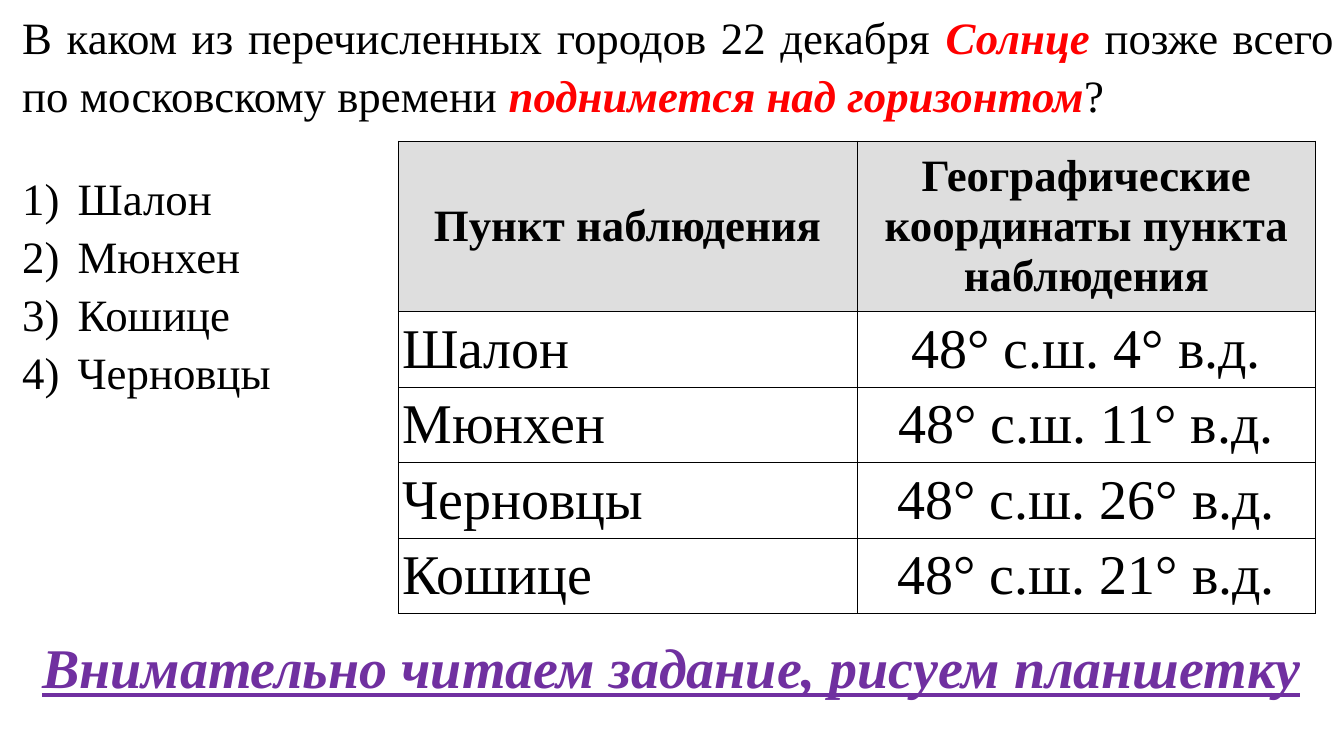
from lxml.etree import SubElement
from pptx import Presentation
from pptx.dml.color import RGBColor
from pptx.enum.text import MSO_ANCHOR, MSO_AUTO_SIZE, PP_ALIGN
from pptx.oxml.ns import qn
from pptx.util import Inches, Pt

BLACK = RGBColor(0x00, 0x00, 0x00)
WHITE = RGBColor(0xFF, 0xFF, 0xFF)
RED = RGBColor(0xFF, 0x00, 0x00)
PURPLE = RGBColor(0x70, 0x30, 0xA0)
GREY = RGBColor(0xDE, 0xDE, 0xDE)

NORMAL = dict(size=Pt(32), bold=False, italic=False)
ACCENT = dict(size=Pt(32), bold=True, italic=True)
HEADER = dict(size=Pt(32), bold=True)
CELL = dict(size=Pt(40), bold=False)
REMINDER = dict(size=Pt(40), bold=True, italic=True, underline=True)

LINE_SPACING = 1.08
NUMBER_INDENT = Inches(0.55)
CELL_MARGIN = Inches(0.04)
HEADER_HEIGHT, ROW_HEIGHT = Inches(1.69), Inches(0.75)

QUESTION = [
    ("В каком из перечисленных городов 22 декабря ", NORMAL, BLACK),
    ("Солнце", ACCENT, RED),
    (" позже всего по московскому времени ", NORMAL, BLACK),
    ("поднимется над горизонтом", ACCENT, RED),
    ("?", NORMAL, BLACK),
]
ANSWERS = ["Шалон", "Мюнхен", "Кошице", "Черновцы"]
TABLE = [
    ("Пункт наблюдения", "Географические координаты пункта наблюдения"),
    ("Шалон", "48° с.ш. 4° в.д."),
    ("Мюнхен", "48° с.ш. 11° в.д."),
    ("Черновцы", "48° с.ш. 26° в.д."),
    ("Кошице", "48° с.ш. 21° в.д."),
]


def add_run(p, text, style, color):
    r = p.add_run()
    r.text = text
    r.font.name = "Times New Roman"
    r.font.color.rgb = color
    for name, value in style.items():
        setattr(r.font, name, value)


def place(sp, box):
    """Move a placeholder into the box and align its text to the top."""
    sp.left, sp.top, sp.width, sp.height = (Inches(v) for v in box)
    tf = sp.text_frame
    tf.word_wrap = True
    tf.auto_size = MSO_AUTO_SIZE.NONE
    tf.vertical_anchor = MSO_ANCHOR.TOP
    return tf


def add_question(s, box):
    p = place(s.shapes.title, box).paragraphs[0]
    p.alignment = PP_ALIGN.JUSTIFY
    p.line_spacing = LINE_SPACING
    for text, style, color in QUESTION:
        add_run(p, text, style, color)


def add_answers(s, box):
    tf = place(s.placeholders[1], box)
    for i, city in enumerate(ANSWERS):
        p = tf.add_paragraph() if i else tf.paragraphs[0]
        p.line_spacing = LINE_SPACING
        p.space_before = Pt(0)
        pPr = p._p.get_or_add_pPr()
        pPr.set("marL", str(NUMBER_INDENT))
        pPr.set("indent", str(-NUMBER_INDENT))
        SubElement(pPr, qn("a:buFont"), typeface="+mj-lt")
        SubElement(pPr, qn("a:buAutoNum"), type="arabicParenR")
        add_run(p, city, NORMAL, BLACK)


def add_borders(cell):
    tcPr = cell._tc.get_or_add_tcPr()
    for i, side in enumerate(("lnL", "lnR", "lnT", "lnB")):
        ln = tcPr.makeelement(qn(f"a:{side}"), {"w": str(Pt(0.75))})
        fill = SubElement(ln, qn("a:solidFill"))
        SubElement(fill, qn("a:srgbClr"), val=str(BLACK))
        tcPr.insert(i, ln)


def add_coordinates(s, box):
    table = s.shapes.add_table(len(TABLE), 2, *(Inches(v) for v in box)).table
    for i, texts in enumerate(TABLE):
        table.rows[i].height = ROW_HEIGHT if i else HEADER_HEIGHT
        for j, text in enumerate(texts):
            cell = table.cell(i, j)
            cell.fill.solid()
            cell.fill.fore_color.rgb = WHITE if i else GREY
            cell.vertical_anchor = MSO_ANCHOR.MIDDLE
            for side in ("left", "right", "top", "bottom"):
                setattr(cell, f"margin_{side}", CELL_MARGIN)
            p = cell.text_frame.paragraphs[0]
            p.alignment = PP_ALIGN.LEFT if i and j == 0 else PP_ALIGN.CENTER
            add_run(p, text, CELL if i else HEADER, BLACK)
            add_borders(cell)


def add_reminder(s, box):
    tf = s.shapes.add_textbox(*(Inches(v) for v in box)).text_frame
    tf.word_wrap = False
    tf.auto_size = MSO_AUTO_SIZE.SHAPE_TO_FIT_TEXT
    add_run(tf.paragraphs[0], "Внимательно читаем задание, рисуем планшетку",
            REMINDER, PURPLE)


def main():
    prs = Presentation()
    prs.slide_width, prs.slide_height = Inches(13.33), Inches(7.5)
    s = prs.slides.add_slide(prs.slide_layouts[1])
    s.background.fill.solid()
    s.background.fill.fore_color.rgb = WHITE
    add_question(s, (0.12, 0, 13.21, 1.2))
    add_answers(s, (0.12, 1.6, 3.7, 2.27))
    add_coordinates(s, (3.95, 1.4, 9.1, 4.69))
    add_reminder(s, (0.32, 6.23, 12.82, 0.77))
    prs.save("out.pptx")


if __name__ == "__main__":
    main()
